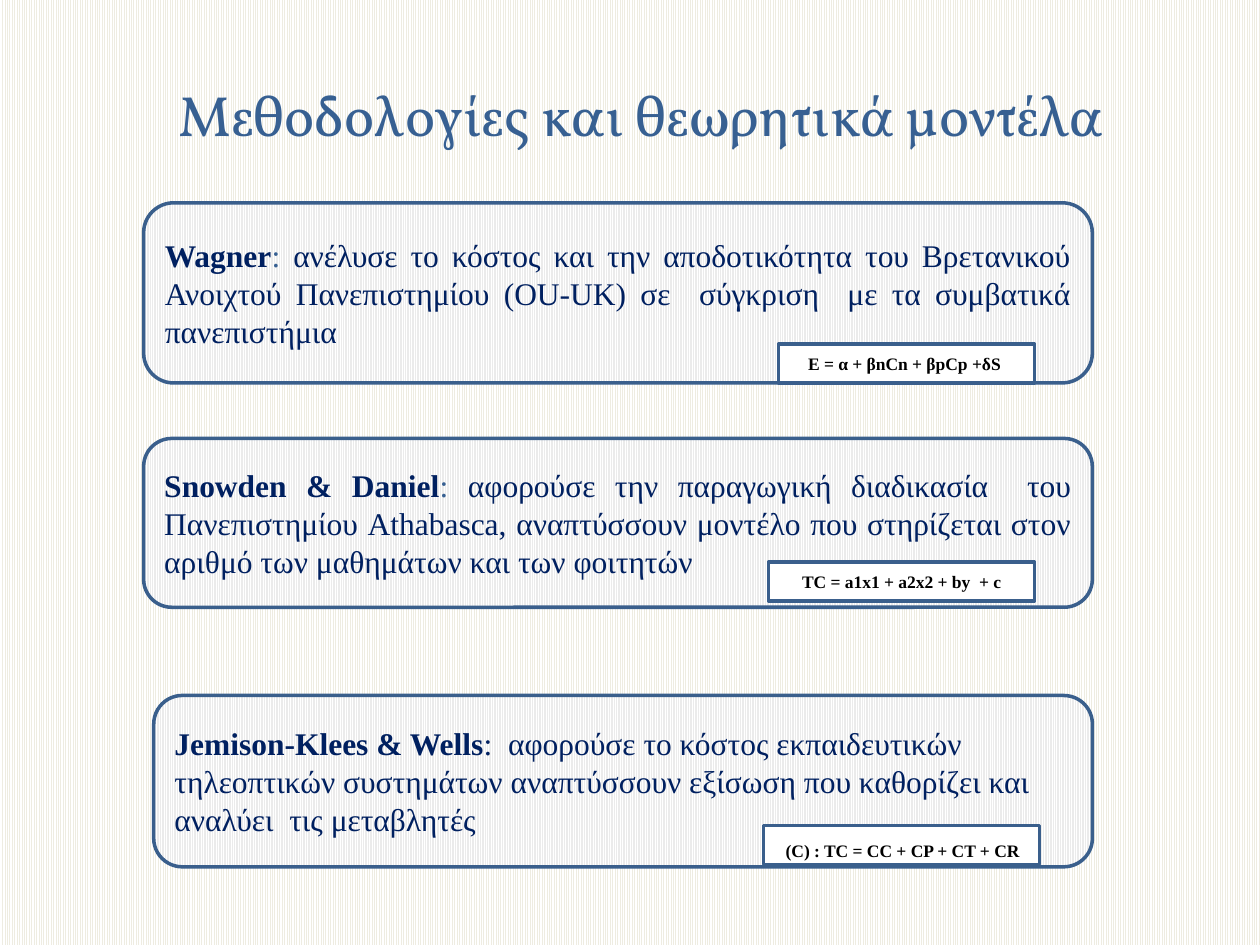
"""Build the slide on methodologies and theoretical models."""
from pptx import Presentation
from pptx.dml.color import RGBColor
from pptx.enum import dml, shapes, text
from pptx.util import Inches, Pt

COLORS = {
    "title": "376092", "navy": "002060", "border": "3A5F8C", "black": "000000",
    "white": "FFFFFF", "gray": "EBEBEB", "cream": "EEECE1",
}
SERIF = "Times New Roman"
DISPLAY = "Vollkorn"
JUSTIFY, LEFT, CENTER = text.PP_ALIGN.JUSTIFY, text.PP_ALIGN.LEFT, text.PP_ALIGN.CENTER

MODELS = [
    {
        "box": (1.14, 1.61, 7.53, 1.43), "align": JUSTIFY,
        "runs": [
            ("Wagner", "navy", True), (": ", "title", False),
            ("ανέλυσε το κόστος και την αποδοτικότητα του Βρετανικού Ανοιχτού "
             "Πανεπιστημίου (OU-UK) σε  σύγκριση  με τα συμβατικά πανεπιστήμια ",
             "navy", False),
        ],
        "formula_box": (6.18, 2.73, 2.03, 0.31),
        "formula": [("E = α + βnCn + βpCp +δS ", 10, SERIF, True)],
    },
    {
        "box": (1.14, 3.48, 7.53, 1.34), "align": JUSTIFY,
        "runs": [
            ("Snowden & Daniel", "navy", True), (": ", "title", False),
            ("αφορούσε την παραγωγική διαδικασία  του Πανεπιστημίου Athabasca, "
             "αναπτύσσουν μοντέλο που στηρίζεται στον αριθμό των μαθημάτων και "
             "των φοιτητών", "navy", False),
        ],
        "formula_box": (6.1, 4.46, 2.11, 0.31),
        "formula": [("TC = a1x1 + a2x2 + by  + c", 10, SERIF, True)],
    },
    {
        "box": (1.22, 5.52, 7.45, 1.36), "align": LEFT,
        "runs": [
            ("Jemison-Klees & Wells", "navy", True),
            (":  αφορούσε το κόστος εκπαιδευτικών τηλεοπτικών συστημάτων "
             "αναπτύσσουν εξίσωση που καθορίζει και αναλύει  τις μεταβλητές",
             "navy", False),
        ],
        "formula_box": (6.06, 6.55, 2.19, 0.31),
        "formula": [(" ", 18, DISPLAY, False),
                    ("(C) : TC = CC + CP + CT + CR ", 10, SERIF, True)],
    },
]


def rgb(name):
    """Return the named colour."""
    return RGBColor.from_string(COLORS[name])


def set_stripes(fill, fore, back):
    """Fill with light vertical stripes."""
    fill.patterned()
    fill.pattern = dml.MSO_PATTERN.LIGHT_VERTICAL
    fill.fore_color.rgb = rgb(fore)
    fill.back_color.rgb = rgb(back)


def style_run(r, size, font, color, bold=False):
    """Format one run."""
    r.font.size = Pt(size)
    r.font.name = font
    r.font.bold = bold
    r.font.color.rgb = rgb(color)


def add_frame(s, kind, box, align):
    """Add an outlined shape and return it with its paragraph."""
    sp = s.shapes.add_shape(kind, *map(Inches, box))
    sp.shadow.inherit = False
    sp.line.color.rgb = rgb("border")
    sp.line.width = Pt(2)
    tf = sp.text_frame
    tf.word_wrap = True
    tf.vertical_anchor = text.MSO_ANCHOR.MIDDLE
    p = tf.paragraphs[0]
    p.alignment = align
    return sp, p


def add_title(s, box, title):
    """Place and format the slide title."""
    sp = s.shapes.title
    sp.left, sp.top, sp.width, sp.height = map(Inches, box)
    tf = sp.text_frame
    tf.text = title
    tf.word_wrap = True
    tf.auto_size = text.MSO_AUTO_SIZE.NONE
    tf.vertical_anchor = text.MSO_ANCHOR.MIDDLE
    p = tf.paragraphs[0]
    p.alignment = CENTER
    style_run(p.runs[0], 32.4, DISPLAY, "title")


def add_card(s, box, runs, align):
    """Add a rounded card describing one model."""
    sp, p = add_frame(s, shapes.MSO_SHAPE.ROUNDED_RECTANGLE, box, align)
    set_stripes(sp.fill, "white", "gray")
    for words, color, bold in runs:
        r = p.add_run()
        r.text = words
        style_run(r, 18, SERIF, color, bold)


def add_formula(s, box, runs):
    """Add a white label holding a formula."""
    sp, p = add_frame(s, shapes.MSO_SHAPE.RECTANGLE, box, CENTER)
    sp.fill.solid()
    sp.fill.fore_color.rgb = rgb("white")
    for words, size, font, bold in runs:
        r = p.add_run()
        r.text = words
        style_run(r, size, font, "black", bold)


def main():
    """Build and save the presentation."""
    prs = Presentation()
    prs.slide_width, prs.slide_height = Inches(10), Inches(7.5)
    s = prs.slides.add_slide(prs.slide_layouts[5])
    set_stripes(s.background.fill, "cream", "white")
    add_title(s, (0.55, 0.55, 9.08, 0.7), "Μεθοδολογίες και θεωρητικά μοντέλα")
    for model in MODELS:
        add_card(s, model["box"], model["runs"], model["align"])
        add_formula(s, model["formula_box"], model["formula"])
    prs.save("out.pptx")


if __name__ == "__main__":
    main()
